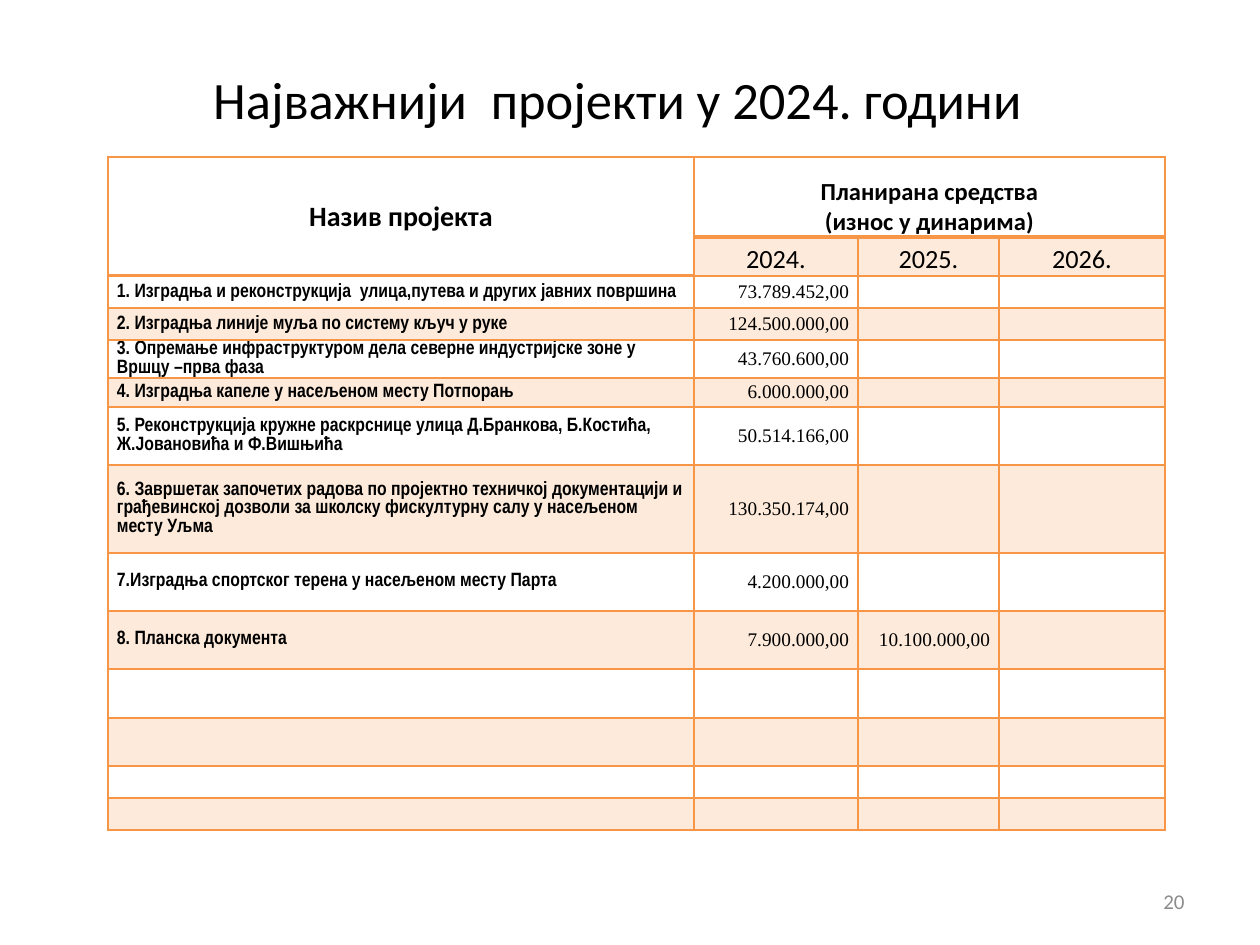
from dataclasses import dataclass

from lxml import etree
from pptx import Presentation
from pptx import util as u
from pptx.dml.color import RGBColor
from pptx.enum import text
from pptx.oxml import ns

PX = 914400 / 126
BLACK = RGBColor(0, 0, 0)
GRAY = RGBColor(0x8C, 0x8C, 0x8C)
ORANGE = RGBColor(0xF7, 0x96, 0x46)
LEFT, CENTER, RIGHT = text.PP_ALIGN.LEFT, text.PP_ALIGN.CENTER, text.PP_ALIGN.RIGHT
MIDDLE, BOTTOM = text.MSO_ANCHOR.MIDDLE, text.MSO_ANCHOR.BOTTOM


@dataclass(frozen=True)
class Style:
    font: str
    size: int
    bold: bool = False
    align: int = LEFT
    anchor: int = MIDDLE
    color: RGBColor = BLACK


@dataclass(frozen=True)
class Project:
    height: int
    name: str = ""
    amounts: tuple[str, ...] = ()


TITLE = Style("Calibri", 30, align=CENTER)
NAME_HEAD = Style("Calibri", 16, True, CENTER)
FUNDS_HEAD = Style("Calibri", 14, True, CENTER, BOTTOM)
YEAR = Style("Calibri", 15, align=CENTER, anchor=BOTTOM)
NAME = Style("Arial Narrow", 11, True)
AMOUNT = Style("Times New Roman", 11, align=RIGHT)
PAGE = Style("Calibri", 12, align=RIGHT, color=GRAY)

COLUMNS = (586, 164, 141, 166)
HEADER_ROWS = (80, 39)
YEARS = ("2024.", "2025.", "2026.")
PROJECTS = (
    Project(32, "1. Изградња и реконструкција  улица,путева и других јавних површина", ("73.789.452,00",)),
    Project(32, "2. Изградња линије муља по систему кључ у руке", ("124.500.000,00",)),
    Project(38, "3. Опремање инфраструктуром дела северне индустријске зоне у Вршцу –прва фаза",
            ("43.760.600,00",)),
    Project(29, "4. Изградња капеле у насељеном месту Потпорањ", ("6.000.000,00",)),
    Project(58, "5. Реконструкција кружне раскрснице улица Д.Бранкова, Б.Костића, "
                "Ж.Јовановића и Ф.Вишњића", ("50.514.166,00",)),
    Project(88, "6. Завршетак започетих радова по пројектно техничкој документацији и "
                "грађевинској дозволи за школску фискултурну салу у насељеном месту Уљма",
            ("130.350.174,00",)),
    Project(58, "7.Изградња спортског терена у насељеном месту Парта", ("4.200.000,00",)),
    Project(58, "8. Планска документа", ("7.900.000,00", "10.100.000,00")),
    Project(49),
    Project(48),
    Project(32),
    Project(32),
)


def px(n: int) -> u.Emu:
    return u.Emu(round(n * PX))


def write(tf, content: str, style: Style) -> None:
    tf.text = content
    tf.word_wrap = True
    tf.vertical_anchor = style.anchor
    for p in tf.paragraphs:
        p.alignment = style.align
        p.font.name = style.font
        p.font.size = u.Pt(style.size)
        p.font.bold = style.bold
        p.font.color.rgb = style.color


def add_borders(cell, top: int, bottom: int) -> None:
    tc_pr = cell._tc.get_or_add_tcPr()
    widths = {"lnL": 1, "lnR": 1, "lnT": top, "lnB": bottom}
    for i, (tag, width) in enumerate(widths.items()):
        ln = etree.Element(ns.qn(f"a:{tag}"), w=str(u.Pt(width)))
        fill = etree.SubElement(ln, ns.qn("a:solidFill"))
        etree.SubElement(fill, ns.qn("a:srgbClr"), val=str(ORANGE))
        tc_pr.insert(i, ln)


def format_cell(cell, content: str, style: Style, tinted: bool, top: int = 1, bottom: int = 1) -> None:
    write(cell.text_frame, content, style)
    cell.vertical_anchor = style.anchor
    cell.margin_left = cell.margin_right = px(9)
    cell.margin_top = cell.margin_bottom = 0
    if tinted:
        cell.fill.solid()
        cell.fill.fore_color.rgb = ORANGE
        color = cell._tc.tcPr.find(".//" + ns.qn("a:srgbClr"))
        etree.SubElement(color, ns.qn("a:alpha"), val="20000")
    else:
        cell.fill.background()
    add_borders(cell, top, bottom)


def add_projects_table(s) -> None:
    heights = (*HEADER_ROWS, *(project.height for project in PROJECTS))
    frame = s.shapes.add_table(len(heights), len(COLUMNS), px(108), px(157),
                               px(sum(COLUMNS)), px(sum(heights)))
    table = frame.table
    table.first_row = table.horz_banding = False
    for column, width in zip(table.columns, COLUMNS):
        column.width = px(width)
    for row, height in zip(table.rows, heights):
        row.height = px(height)

    table.cell(0, 0).merge(table.cell(1, 0))
    table.cell(0, 1).merge(table.cell(0, 3))
    format_cell(table.cell(0, 0), "Назив пројекта", NAME_HEAD, False, bottom=2)
    format_cell(table.cell(0, 1), "Планирана средства\n(износ у динарима)", FUNDS_HEAD, False, bottom=2)
    for c in (2, 3):
        add_borders(table.cell(0, c), 1, 2)
    add_borders(table.cell(1, 0), 1, 2)
    for c, year in enumerate(YEARS, 1):
        format_cell(table.cell(1, c), year, YEAR, True, top=2)

    for i, project in enumerate(PROJECTS):
        values = (project.name, *project.amounts)
        for c in range(len(COLUMNS)):
            content = values[c] if c < len(values) else ""
            top = 2 if i == 0 and c == 0 else 1
            format_cell(table.cell(i + 2, c), content, AMOUNT if c else NAME, i % 2 == 1, top)


def main() -> None:
    prs = Presentation()
    prs.slide_width, prs.slide_height = px(1260), px(945)
    s = prs.slides.add_slide(prs.slide_layouts[5])

    title = s.shapes.title
    title.left, title.top, title.width, title.height = px(63), px(38), px(1134), px(121)
    write(title.text_frame, "Најважнији  пројекти у 2024. години", TITLE)
    title.text_frame.margin_right = px(37)

    add_projects_table(s)

    page = s.shapes.add_textbox(px(903), px(876), px(294), px(50))
    write(page.text_frame, "20", PAGE)

    prs.save("out.pptx")


if __name__ == "__main__":
    main()
